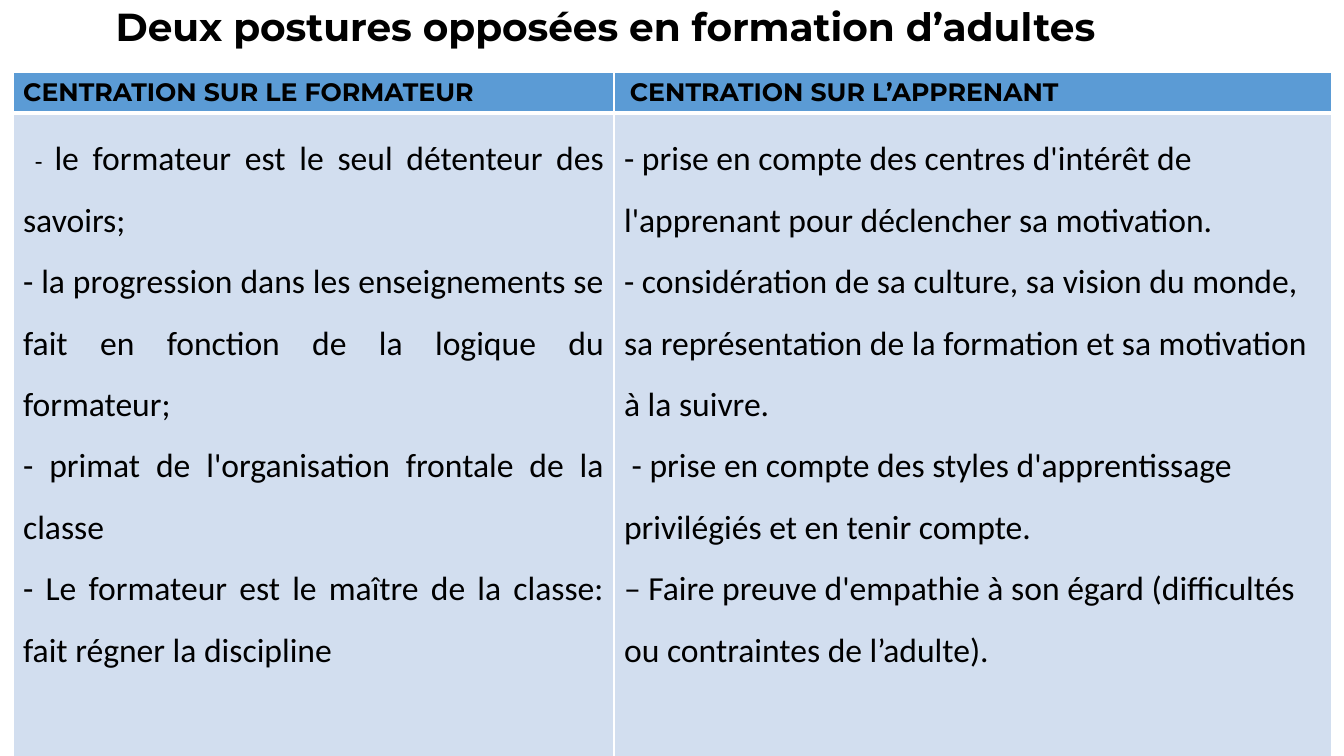
"""Build a slide comparing two postures in adult training."""
from lxml.etree import SubElement
from pptx import Presentation
from pptx.dml.color import RGBColor
from pptx.enum.text import MSO_ANCHOR as ANCHOR, MSO_AUTO_SIZE as AUTO, PP_ALIGN as ALIGN
from pptx.oxml.ns import qn
from pptx.util import Pt

COLORS = {"text": "000000", "line": "FFFFFF", "header": "5B9BD5", "body": "D2DEEF"}
HEAD = {"name": "Montserrat", "size": 18, "bold": True}
SPACE = {"name": "Calibri", "size": 18, "bold": True}
DASH = {"name": "Calibri", "size": 18, "bold": False}
BODY = {"name": "Calibri", "size": 24, "bold": False}

TITLE = [
    (" ", {"name": "Calibri", "size": 39.6, "bold": False}),
    ("Deux postures opposées en formation d’adultes",
     {"name": "Montserrat", "size": 27.9, "bold": True}),
]
HEADERS = [
    [[("CENTRATION SUR LE FORMATEUR", HEAD)]],
    [[(" ", SPACE), ("CENTRATION SUR L’APPRENANT", HEAD)]],
]
TRAINER = [
    [(" - ", DASH), ("le formateur est le seul détenteur des savoirs; ", BODY)],
    [("- la progression dans les enseignements se fait en fonction de la logique du formateur; ", BODY)],
    [("- primat de l'organisation frontale de la classe ", BODY)],
    [("- Le formateur est le maître de la classe: fait régner la discipline", BODY)],
]
LEARNER = [
    [("- prise en compte des centres d'intérêt de l'apprenant pour déclencher sa motivation.", BODY)],
    [("- considération de sa culture, sa vision du monde, sa représentation de la formation "
      "et sa motivation à la suivre.", BODY)],
    [(" - prise en compte des styles d'apprentissage privilégiés et en tenir compte.", BODY)],
    [("– Faire preuve d'empathie à son égard (difficultés ou contraintes de l’adulte).", BODY)],
]
ROWS = [
    {"height": 40, "fill": "header", "bottom": 3, "spacing": 1.0,
     "aligns": (ALIGN.LEFT, ALIGN.LEFT), "cells": HEADERS},
    {"height": 644, "fill": "body", "bottom": 1, "spacing": 1.5,
     "aligns": (ALIGN.JUSTIFY, ALIGN.LEFT), "cells": (TRAINER, LEARNER)},
]
WIDTHS = (601, 718)
SLIDE = (1344, 756)
TITLE_BOX = (93, 0, 1159, 47)
TABLE_AT = (13, 72)


def px(n):
    return round(n * 914400 / 100.8)


def write(tf, paragraphs, align, spacing):
    for i, runs in enumerate(paragraphs):
        p = tf.add_paragraph() if i else tf.paragraphs[0]
        p.alignment, p.line_spacing = align, spacing
        for text, style in runs:
            r = p.add_run()
            r.text = text
            for key, value in style.items():
                setattr(r.font, key, Pt(value) if key == "size" else value)
            r.font.color.rgb = RGBColor.from_string(COLORS["text"])


def set_borders(cell, bottom):
    props = cell._tc.get_or_add_tcPr()
    for i, (side, width) in enumerate((("L", 1), ("R", 1), ("T", 1), ("B", bottom))):
        ln = props.makeelement(qn(f"a:ln{side}"), {"w": str(Pt(width))})
        fill = SubElement(ln, qn("a:solidFill"))
        SubElement(fill, qn("a:srgbClr"), val=COLORS["line"])
        props.insert(i, ln)


def add_title(s):
    title = s.shapes.title
    for key, value in zip(("left", "top", "width", "height"), TITLE_BOX):
        setattr(title, key, px(value))
    tf = title.text_frame
    for key, value in {"vertical_anchor": ANCHOR.MIDDLE, "auto_size": AUTO.NONE,
                       "word_wrap": True}.items():
        setattr(tf, key, value)
    write(tf, [TITLE], ALIGN.LEFT, 0.9)


def add_comparison(s):
    size = (sum(WIDTHS), sum(row["height"] for row in ROWS))
    table = s.shapes.add_table(len(ROWS), len(WIDTHS), *map(px, TABLE_AT + size)).table
    for column, width in zip(table.columns, WIDTHS):
        column.width = px(width)
    for i, row in enumerate(ROWS):
        table.rows[i].height = px(row["height"])
        for j, (paragraphs, align) in enumerate(zip(row["cells"], row["aligns"])):
            cell = table.cell(i, j)
            cell.fill.solid()
            cell.fill.fore_color.rgb = RGBColor.from_string(COLORS[row["fill"]])
            set_borders(cell, row["bottom"])
            write(cell.text_frame, paragraphs, align, row["spacing"])


def main():
    prs = Presentation()
    prs.slide_width, prs.slide_height = map(px, SLIDE)
    s = prs.slides.add_slide(prs.slide_layouts[5])
    add_title(s)
    add_comparison(s)
    prs.save("out.pptx")


if __name__ == "__main__":
    main()
